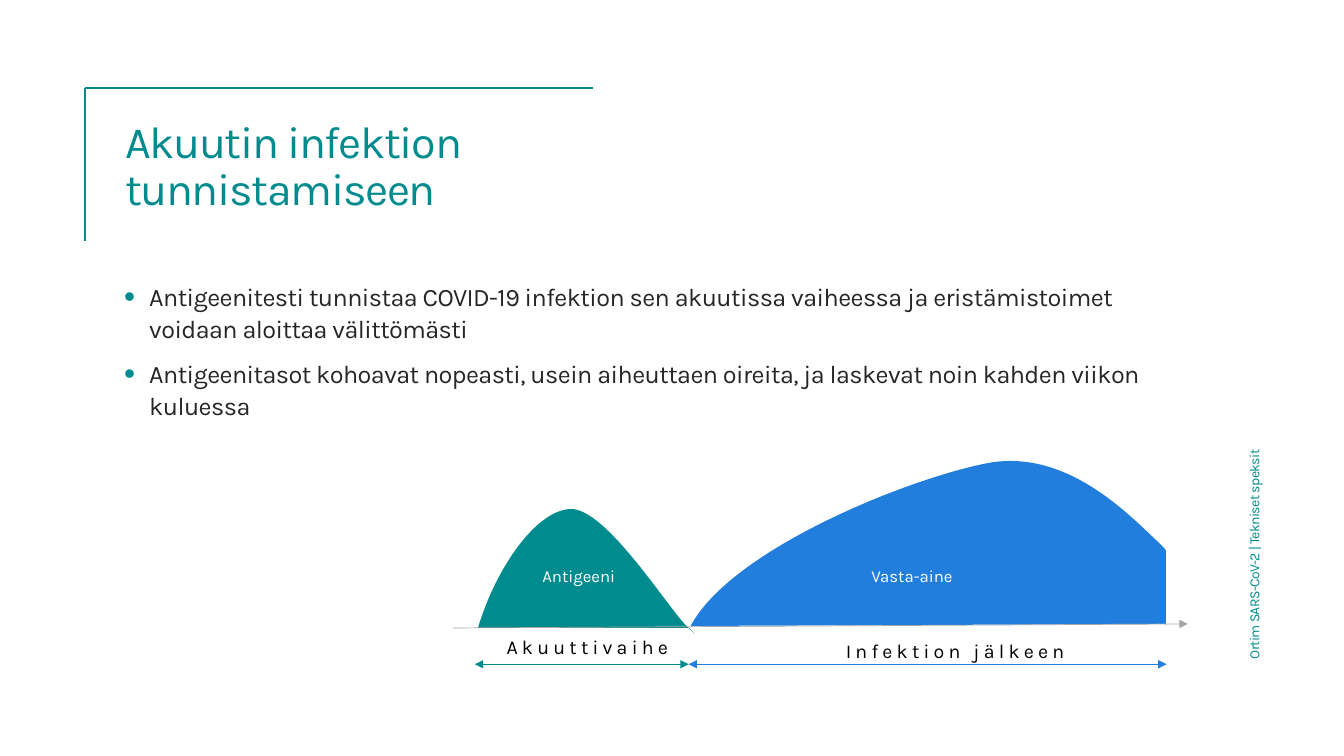
from pptx import Presentation
from pptx.dml.color import RGBColor
from pptx.enum.shapes import MSO_CONNECTOR as CONN, MSO_SHAPE as SHAPE
from pptx.enum.text import MSO_ANCHOR as ANCHOR, PP_ALIGN as ALIGN
from pptx.oxml.ns import qn
from pptx.util import Inches, Pt
from lxml.etree import SubElement

TEAL, BLUE, GREY, WHITE = "008B8E", "227EDC", "A6A6A6", "FFFFFF"


def rgb(value):
    return RGBColor.from_string(value)


def add_text(box, texts, size, color, spacing=0, align=None, insets=(0.1, 0.05, 0.1, 0.05),
             anchor=ANCHOR.TOP, line=None, before=0, bullet=False):
    tf = s.shapes.add_textbox(*[Inches(v) for v in box]).text_frame
    tf.word_wrap = True
    tf.vertical_anchor = anchor
    tf.margin_left, tf.margin_top, tf.margin_right, tf.margin_bottom = [Inches(v) for v in insets]
    for i, text in enumerate(texts):
        p = tf.add_paragraph() if i else tf.paragraphs[0]
        if bullet:
            pPr = p._p.get_or_add_pPr()
            pPr.set("marL", str(Inches(0.25)))
            pPr.set("indent", str(Inches(-0.25)))
            SubElement(SubElement(pPr, qn("a:buClr")), qn("a:srgbClr"), val=TEAL)
            SubElement(pPr, qn("a:buSzPct"), val="125000")
            SubElement(pPr, qn("a:buFont"), typeface="Arial")
            SubElement(pPr, qn("a:buChar"), char="•")
        if align is not None:
            p.alignment = align
        if line:
            p.line_spacing = Pt(line)
        if i:
            p.space_before = Pt(before)
        r = p.add_run()
        r.text = text
        r.font.name = "Karla"
        r.font.size = Pt(size)
        r.font.color.rgb = rgb(color)
        r._r.get_or_add_rPr().set("spc", str(round(spacing * 100)))
    return tf


prs = Presentation()
prs.slide_width, prs.slide_height = Inches(13.33), Inches(7.5)
s = prs.slides.add_slide(prs.slide_layouts[6])

tf = add_text((11.92, 2.27, 1.03, 4.37), ["Ortim SARS-CoV-2 | Tekniset speksit"], 10, TEAL, -0.4,
              anchor=ANCHOR.MIDDLE)
tf._txBody.bodyPr.set("vert", "vert270")
add_text((1.24, 0.88, 6.25, 1.52), ["Akuutin infektion tunnistamiseen"], 32, TEAL, -1,
         insets=(0, 0.05, 0.1, 0), anchor=ANCHOR.MIDDLE, line=33.4)
add_text((1.23, 2.73, 10.42, 3.86), [
    "Antigeenitesti tunnistaa COVID-19 infektion sen akuutissa vaiheessa ja "
    "eristämistoimet voidaan aloittaa välittömästi",
    "Antigeenitasot kohoavat nopeasti, usein aiheuttaen oireita, ja laskevat noin "
    "kahden viikon kuluessa",
], 18, "262626", -0.4, insets=(0, 0.05, 0.1, 0.05), line=22.6, before=10, bullet=True)

antigen = [(4.74, 6.23),
           (4.92, 5.63), (5.32, 5.06), (5.66, 5.05),
           (6, 5.04), (6.6, 5.99), (6.79, 6.19),
           (6.99, 6.39), (6.82, 6.22), (6.84, 6.23)]
antibody = [(6.85, 6.21),
            (7.26, 5.44), (9.05, 4.73), (9.82, 4.59),
            (10.6, 4.46), (11.21, 5.12), (11.5, 5.39),
            (11.79, 5.65), (11.56, 6.03), (11.57, 6.16),
            (11.58, 6.3), (11.56, 6.18), (11.56, 6.19)]
for (left, top, width, height), points, color in (
    ((4.74, 5.05, 2.15, 1.23), antigen, TEAL),
    ((6.85, 4.58, 4.8, 1.65), antibody, BLUE),
):
    builder = s.shapes.build_freeform(Inches(left), Inches(top))
    builder.add_line_segments([(Inches(left + width), Inches(top + height))], close=False)
    sp = builder.convert_to_shape()
    sp.shadow.inherit = False
    sp.fill.solid()
    sp.fill.fore_color.rgb = rgb(color)
    sp.line.fill.background()
    outline = sp._element.find(".//" + qn("a:path"))
    for segment in list(outline):
        outline.remove(segment)
    for i, (x, y) in enumerate(points):
        if i == 0:
            segment = SubElement(outline, qn("a:moveTo"))
        elif i % 3 == 1:
            segment = SubElement(outline, qn("a:cubicBezTo"))
        SubElement(segment, qn("a:pt"), x=str(Inches(x - left)), y=str(Inches(y - top)))
    SubElement(outline, qn("a:close"))

for box, text, size, color, spacing, align in (
    ((5.28, 5.56, 1.02, 0.3), "Antigeeni", 12, WHITE, 0, ALIGN.LEFT),
    ((8.14, 5.56, 1.81, 0.3), "Vasta-aine", 12, WHITE, 0, ALIGN.CENTER),
    ((4.75, 6.25, 2.15, 0.34), "Akuuttivaihe", 14, "000000", 3, ALIGN.CENTER),
    ((8.29, 6.29, 2.68, 0.34), "Infektion jälkeen", 14, "000000", 3, ALIGN.LEFT),
):
    add_text(box, [text], size, color, spacing, align)

for box in ((11.57, 5.3, 0.22, 1.12), (6.77, 6.41, 0.22, 0.18)):
    sp = s.shapes.add_shape(SHAPE.RECTANGLE, *[Inches(v) for v in box])
    sp.shadow.inherit = False
    sp.fill.solid()
    sp.fill.fore_color.rgb = rgb(WHITE)
    sp.line.color.rgb = rgb(WHITE)
    sp.line.width = Pt(1)

for ends, color, width, arrows in (
    ((0.84, 2.39, 0.84, 0.87), TEAL, 1.25, ()),
    ((5.88, 0.87, 0.84, 0.87), TEAL, 1.25, ()),
    ((6.83, 6.59, 11.57, 6.59), BLUE, 0.5, ("headEnd", "tailEnd")),
    ((4.71, 6.59, 6.83, 6.59), TEAL, 0.5, ("headEnd", "tailEnd")),
    ((4.49, 6.23, 11.78, 6.19), GREY, 0.5, ("tailEnd",)),
):
    c = s.shapes.add_connector(CONN.STRAIGHT, *[Inches(v) for v in ends])
    c.line.color.rgb = rgb(color)
    c.line.width = Pt(width)
    for arrow in arrows:
        SubElement(c.line._get_or_add_ln(), qn("a:" + arrow), type="triangle")
    SubElement(c._element.spPr, qn("a:effectLst"))

prs.save("out.pptx")
